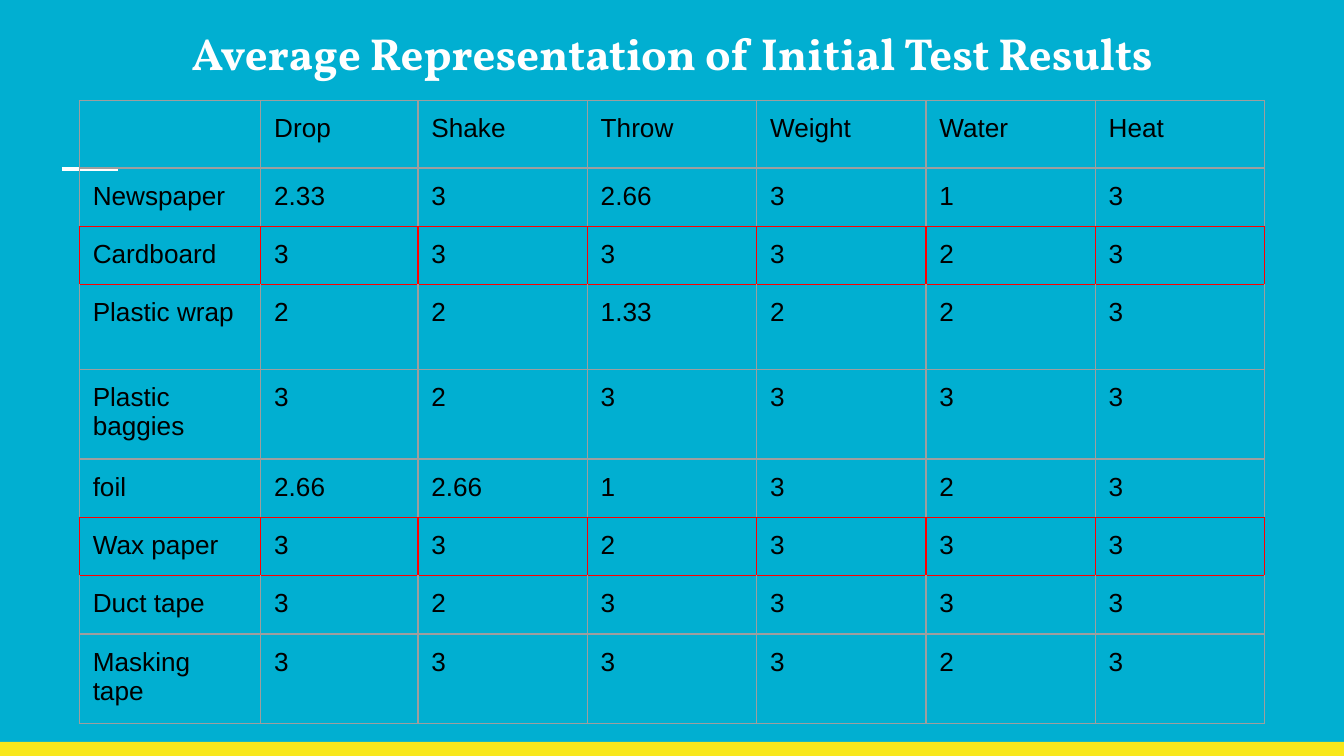
import pptx
import pptx.dml.color
import pptx.enum.shapes
import pptx.enum.text
import pptx.oxml
import pptx.oxml.ns
import pptx.util
from pptx.util import Inches

ROWS = [
    ["", "Drop", "Shake", "Throw", "Weight", "Water", "Heat"],
    ["Newspaper", "2.33", "3", "2.66", "3", "1", "3"],
    ["Cardboard", "3", "3", "3", "3", "2", "3"],
    ["Plastic wrap", "2", "2", "1.33", "2", "2", "3"],
    ["Plastic baggies", "3", "2", "3", "3", "3", "3"],
    ["foil", "2.66", "2.66", "1", "3", "2", "3"],
    ["Wax paper", "3", "3", "2", "3", "3", "3"],
    ["Duct tape", "3", "2", "3", "3", "3", "3"],
    ["Masking tape", "3", "3", "3", "3", "2", "3"],
]
HIGHLIGHTED = {"Cardboard", "Wax paper"}
COL_WIDTHS = [1.35, 1.17] + [1.26] * 5
ROW_HEIGHTS = [0.42, 0.41, 0.41, 0.63, 0.63, 0.41, 0.41, 0.4, 0.56]


def rgb(value):
    return pptx.dml.color.RGBColor.from_string(value)


def xml(tag, attributes="", content=""):
    return pptx.oxml.parse_xml(
        f"<a:{tag} {pptx.oxml.ns.nsdecls('a')} {attributes}>{content}</a:{tag}>")


def write(tf, text, font="Arial", size=14, color="000000", bold=False, align=None, spacing=None):
    p = tf.paragraphs[0]
    p.alignment = align
    p.line_spacing = spacing
    faces = "".join(f'<a:{kind} typeface="{font}"/>' for kind in ("latin", "ea", "cs"))
    if text:
        r = p.add_run()
        r.text = text
        r.font.size = pptx.util.Pt(size)
        r.font.bold = bold
        r.font.color.rgb = rgb(color)
        r.font.name = font
        for kind in ("ea", "cs"):
            r._r.get_or_add_rPr().append(xml(kind, f'typeface="{font}"'))
    # The paragraph mark sets the height of an empty line
    p._p.append(xml("endParaRPr", f'sz="{size * 100}"', faces))


class Deck:
    background, accent, white = "01AFD1", "F8E71C", "FFFFFF"
    grid, highlight = "9E9E9E", "FF0000"
    heading_font = "Vollkorn"
    margin = Inches(0.1)

    def __init__(self, prs):
        self.s = prs.slides.add_slide(prs.slide_layouts[6])
        fill = self.s.background.fill
        fill.solid()
        fill.fore_color.rgb = rgb(self.background)

    def bar(self, x, y, w, h):
        sp = self.s.shapes.add_shape(
            pptx.enum.shapes.MSO_SHAPE.RECTANGLE, Inches(x), Inches(y), Inches(w), Inches(h))
        sp.shadow.inherit = False
        sp.fill.solid()
        sp.fill.fore_color.rgb = rgb(self.accent)
        sp.line.fill.background()

    def line(self, x1, y1, x2, y2, width):
        cn = self.s.shapes.add_connector(
            pptx.enum.shapes.MSO_CONNECTOR.STRAIGHT,
            Inches(x1), Inches(y1), Inches(x2), Inches(y2))
        cn.line.color.rgb = rgb(self.white)
        cn.line.width = pptx.util.Pt(width)
        cn._element.spPr.append(xml("effectLst"))

    def title(self, text, x, y, w, h):
        tf = self.s.shapes.add_textbox(Inches(x), Inches(y), Inches(w), Inches(h)).text_frame
        tf.word_wrap = True
        tf.vertical_anchor = pptx.enum.text.MSO_ANCHOR.MIDDLE
        tf.margin_left = tf.margin_right = tf.margin_top = tf.margin_bottom = self.margin
        write(tf, text, font=self.heading_font, size=24, color=self.white, bold=True,
              align=pptx.enum.text.PP_ALIGN.CENTER, spacing=0.9)

    def border(self, cell, side, color):
        cell._tc.get_or_add_tcPr().append(xml(
            f"ln{side}", 'w="9525"', f'<a:solidFill><a:srgbClr val="{color}"/></a:solidFill>'))

    def table(self, rows, x, y, widths, heights, highlighted):
        table = self.s.shapes.add_table(
            len(rows), len(widths), Inches(x), Inches(y),
            Inches(sum(widths)), Inches(sum(heights))).table
        table.first_row = table.horz_banding = False
        for column, width in zip(table.columns, widths):
            column.width = Inches(width)
        for row, height in zip(table.rows, heights):
            row.height = Inches(height)

        marked = [row[0] in highlighted for row in rows]
        for i, row in enumerate(rows):
            # A horizontal edge is red when either row beside it is highlighted
            edges = {"L": marked[i], "R": marked[i],
                     "T": any(marked[max(i - 1, 0):i + 1]), "B": any(marked[i:i + 2])}
            for j, text in enumerate(row):
                cell = table.cell(i, j)
                for side, red in edges.items():
                    self.border(cell, side, self.highlight if red else self.grid)
                cell.fill.background()
                cell.margin_left = cell.margin_right = self.margin
                cell.margin_top = cell.margin_bottom = self.margin
                write(cell.text_frame, text, size=14 if text else 18)


def main():
    prs = pptx.Presentation()
    prs.slide_width = Inches(10)
    prs.slide_height = prs.slide_width * 9 // 16
    deck = Deck(prs)

    # Theme decoration
    deck.bar(0, 5.52, 10, 0.11)
    deck.line(0.46, 1.26, 0.88, 1.26, 2.25)

    # Title and results
    deck.title("Average Representation of Initial Test Results", 0.34, 0.08, 9.32, 0.67)
    deck.table(ROWS, 0.59, 0.75, COL_WIDTHS, ROW_HEIGHTS, HIGHLIGHTED)

    prs.save("out.pptx")


if __name__ == "__main__":
    main()
